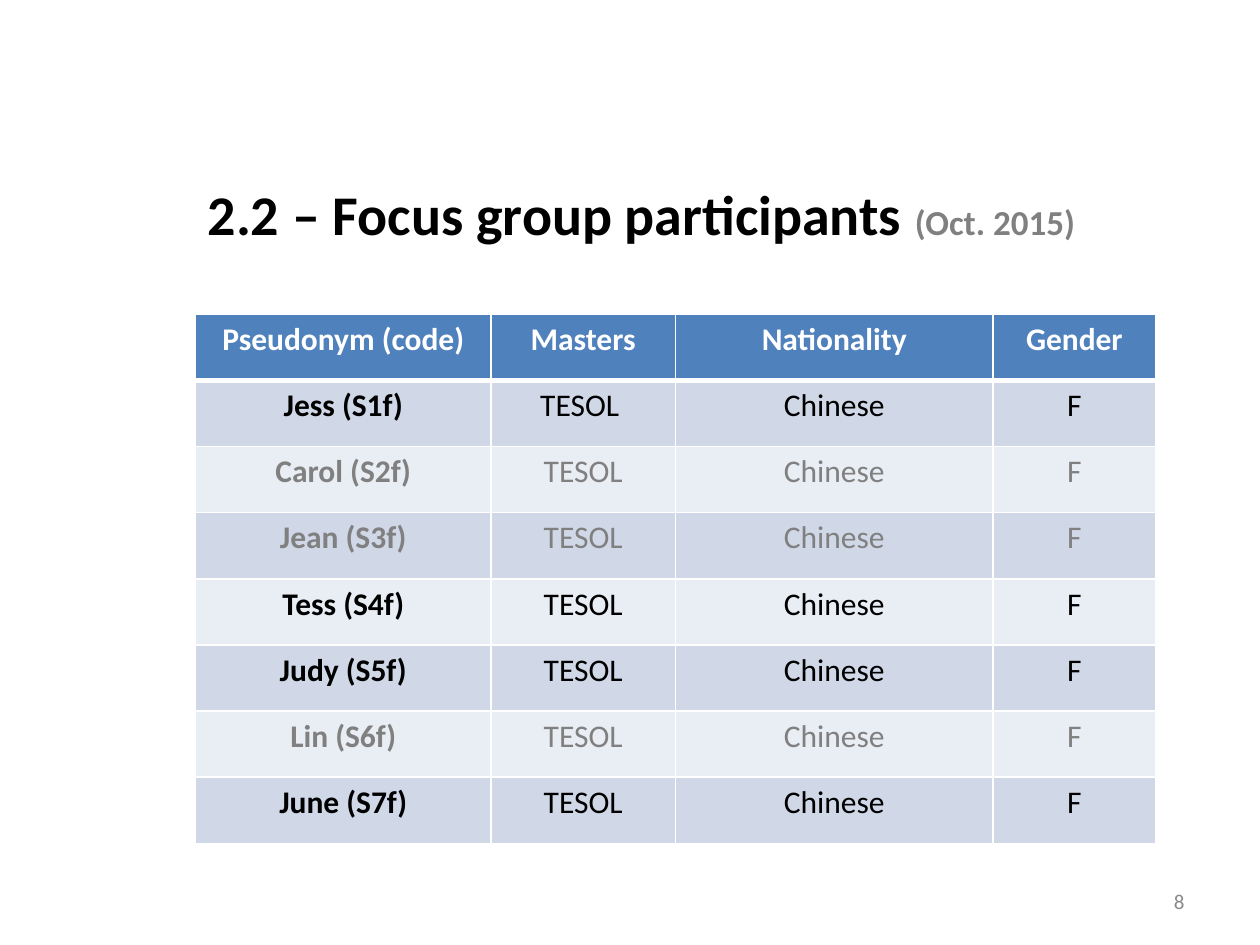
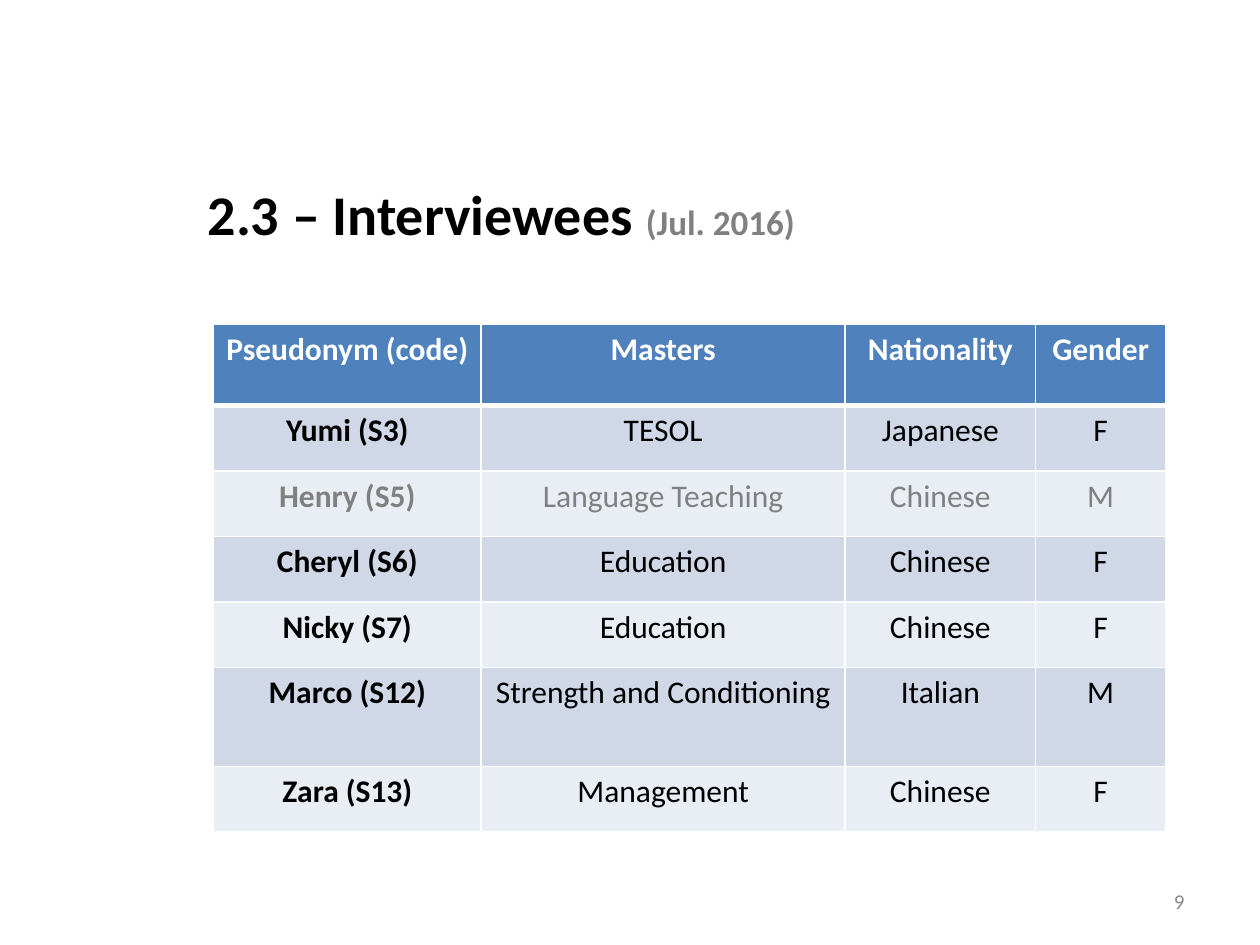
from dataclasses import dataclass

from lxml.etree import SubElement
from pptx import Presentation
from pptx.dml.color import RGBColor
from pptx.enum.text import MSO_ANCHOR, PP_ALIGN
from pptx.oxml.ns import qn
from pptx.util import Pt


@dataclass(frozen=True)
class Theme:
    font: str = "Calibri"
    ink: str = "000000"
    muted: str = "808080"
    page_number: str = "898989"
    white: str = "FFFFFF"
    header: str = "4F81BD"
    bands: tuple = ("D0D8E8", "E9EDF4")
    title_size: int = 32
    date_size: int = 20
    table_size: int = 18
    number_size: int = 12
    thin: int = 1
    thick: int = 3
    cell_margin: float = 5.4


THEME = Theme()
HEADINGS = ("Pseudonym (code)", "Masters", "Nationality", "Gender")
TITLE_AREA = (111.6, 77, 572.4, 90)
NUMBER_AREA = (516, 500.4, 168, 28.8)

FOCUS_GROUP = [
    ("Jess (S1f)", "TESOL ", "Chinese", "F"),
    ("Carol (S2f)", "TESOL", "Chinese", "F"),
    ("Jean (S3f)", "TESOL", "Chinese", "F"),
    ("Tess (S4f)", "TESOL", "Chinese", "F"),
    ("Judy (S5f)", "TESOL", "Chinese", "F"),
    ("Lin (S6f)", "TESOL", "Chinese", "F"),
    ("June (S7f)", "TESOL", "Chinese", "F"),
]
INTERVIEWEES = [
    ("Yumi (S3)", "TESOL", "Japanese", "F"),
    ("Henry (S5)", "Language Teaching", "Chinese", "M"),
    ("Cheryl (S6)", "Education", "Chinese", "F"),
    ("Nicky (S7)", "Education", "Chinese", "F"),
    ("Marco (S12)", "Strength and Conditioning", "Italian", "M"),
    ("Zara (S13)", "Management", "Chinese", "F"),
]
MUTED_PEOPLE = {"Carol (S2f)", "Jean (S3f)", "Lin (S6f)", "Henry (S5)"}


def add_span(para, text, size, color, bold=False):
    span = para.add_run()
    span.text = text
    font_format = {"name": THEME.font, "size": Pt(size), "bold": bold}
    for name, value in font_format.items():
        setattr(span.font, name, value)
    span.font.color.rgb = RGBColor.from_string(color)


def add_text_area(page, area):
    """Add a wrapping, vertically centred box and return its paragraph."""
    frame = page.shapes.add_textbox(*map(Pt, area)).text_frame
    frame.word_wrap = True
    frame.vertical_anchor = MSO_ANCHOR.MIDDLE
    return frame.paragraphs[0]


def add_title(page, title, date):
    para = add_text_area(page, TITLE_AREA)
    add_span(para, f"{title} ", THEME.title_size, THEME.ink, True)
    add_span(para, f"({date})", THEME.date_size, THEME.muted, True)


def add_page_number(page, number):
    para = add_text_area(page, NUMBER_AREA)
    para.alignment = PP_ALIGN.RIGHT
    add_span(para, str(number), THEME.number_size, THEME.page_number)


def set_borders(cell, row_index):
    """Draw white cell borders, thick between the header and the body."""
    thick_side = {0: "lnB", 1: "lnT"}.get(row_index)
    properties = cell._tc.get_or_add_tcPr()
    for side in ("lnL", "lnR", "lnT", "lnB"):
        width = THEME.thick if side == thick_side else THEME.thin
        line = SubElement(properties, qn(f"a:{side}"), w=str(Pt(width)))
        fill = SubElement(line, qn("a:solidFill"))
        SubElement(fill, qn("a:srgbClr"), val=THEME.white)


def fill_cell(cell, text, row_index, color, bold):
    set_borders(cell, row_index)
    background = THEME.bands[(row_index - 1) % 2] if row_index else THEME.header
    cell.fill.solid()
    cell.fill.fore_color.rgb = RGBColor.from_string(background)
    cell.margin_left = cell.margin_right = Pt(THEME.cell_margin)
    para = cell.text_frame.paragraphs[0]
    para.alignment = PP_ALIGN.CENTER
    add_span(para, text, THEME.table_size, color, bold)


def text_color(row_index, person):
    if row_index == 0:
        return THEME.white
    return THEME.muted if person in MUTED_PEOPLE else THEME.ink


def add_people_table(page, people, left, top, widths, heights):
    rows = [HEADINGS, *people]
    area = (left, top, sum(widths), sum(heights))
    table = page.shapes.add_table(len(rows), len(widths), *map(Pt, area)).table
    for column, width in zip(table.columns, widths):
        column.width = Pt(width)
    for row_index, values in enumerate(rows):
        table.rows[row_index].height = Pt(heights[row_index])
        color = text_color(row_index, values[0])
        for column_index, text in enumerate(values):
            bold = row_index == 0 or column_index == 0
            cell = table.cell(row_index, column_index)
            fill_cell(cell, text, row_index, color, bold)


def add_page(deck, number, title, date):
    page = deck.slides.add_slide(deck.slide_layouts[6])
    add_title(page, title, date)
    add_page_number(page, number)
    return page


def main():
    deck = Presentation()
    deck.slide_width, deck.slide_height = Pt(720), Pt(540)

    page = add_page(deck, 8, "2.2 – Focus group participants", "Oct. 2015")
    add_people_table(page, FOCUS_GROUP, 111.8, 179.6,
                     (168.8, 105.4, 181.6, 92.8), [37.8] * 8)

    page = add_page(deck, 9, "2.3 – Interviewees", "Jul. 2016")
    add_people_table(page, INTERVIEWEES, 122, 185.2,
                     (153, 208, 108.8, 74.4), [46.6, *[37.4] * 4, 56.6, 37.4])

    deck.save("out.pptx")


if __name__ == "__main__":
    main()
